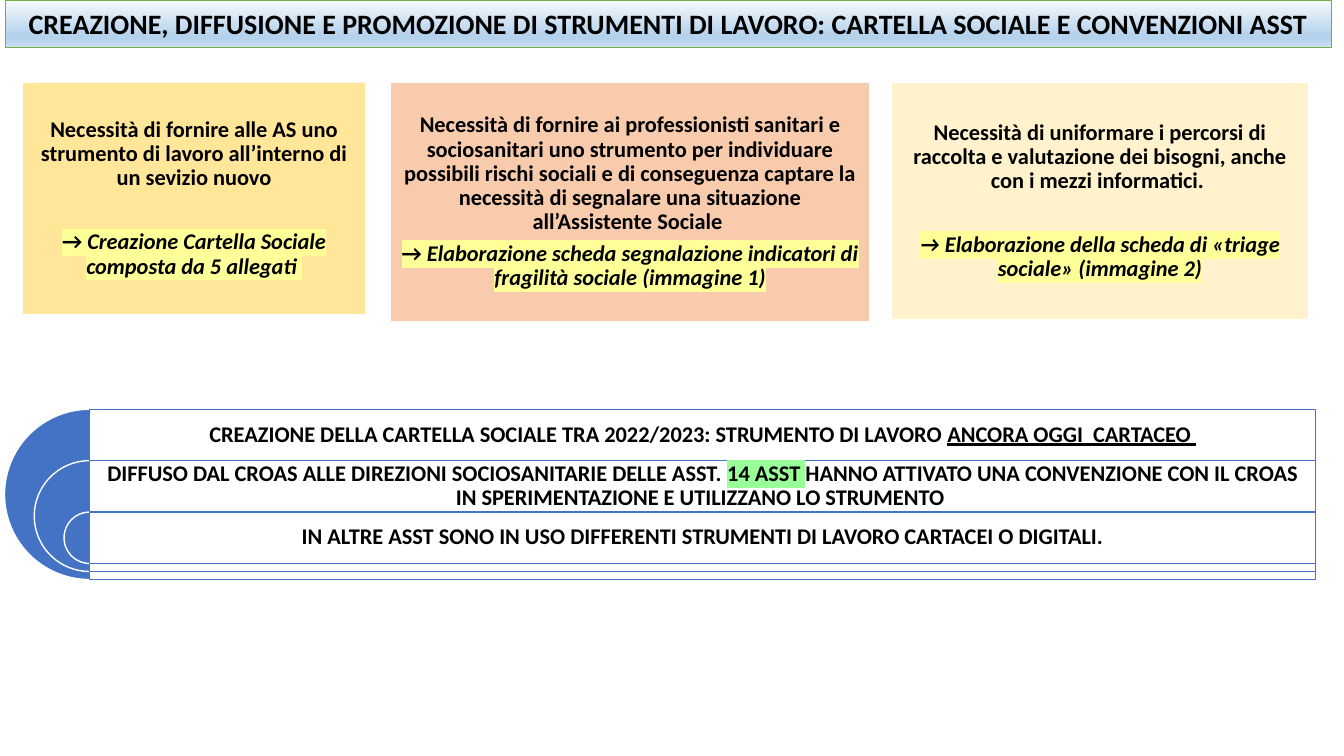
from dataclasses import dataclass

from lxml import etree
from pptx import Presentation
from pptx.dml.color import RGBColor
from pptx.enum.shapes import MSO_SHAPE
from pptx.enum.text import MSO_ANCHOR, PP_ALIGN
from pptx.oxml.ns import qn
from pptx.shapes.autoshape import Shape
from pptx.slide import Slide
from pptx.text.text import TextFrame
from pptx.util import Inches, Pt

RECTANGLE = MSO_SHAPE.RECTANGLE
PIE = MSO_SHAPE.PIE
MIDDLE = MSO_ANCHOR.MIDDLE
CENTER = PP_ALIGN.CENTER

FONT = "Calibri"
BLACK = RGBColor(0x00, 0x00, 0x00)
WHITE = RGBColor(0xFF, 0xFF, 0xFF)
BLUE = RGBColor(0x44, 0x72, 0xC4)
GREEN = RGBColor(0x70, 0xAD, 0x47)
GOLD = RGBColor(0xFF, 0xE6, 0x99)
PEACH = RGBColor(0xF8, 0xCB, 0xAD)
CREAM = RGBColor(0xFF, 0xF2, 0xCC)
YELLOW_MARK = RGBColor(0xFF, 0xFF, 0x99)
GREEN_MARK = RGBColor(0x99, 0xFF, 0x99)
TITLE_STOPS = (
    (0, RGBColor(0xF7, 0xFA, 0xFD)),
    (74, RGBColor(0xB5, 0xD2, 0xEC)),
    (83, RGBColor(0xB5, 0xD2, 0xEC)),
    (100, RGBColor(0xCE, 0xE1, 0xF2)),
)

TITLE = "CREAZIONE, DIFFUSIONE E PROMOZIONE DI STRUMENTI DI LAVORO: CARTELLA SOCIALE E CONVENZIONI ASST"
CARD_TOP = 0.82
BODY_SIZE = 16
BODY_INSET = 0.07
NARROW_GAP = 5.6
WIDE_GAP = 28.5
BAND_LEFT = 0.89
BAND_TOP = 4.06
BAND_WIDTH = 12.16
BAND_STEP = 0.51


@dataclass(frozen=True)
class Span:
    text: str
    italic: bool = False
    underline: bool = False
    mark: RGBColor | None = None


@dataclass(frozen=True)
class Card:
    left: float
    width: float
    height: float
    color: RGBColor
    gap: float
    need: str
    answer: tuple[Span, ...]


@dataclass(frozen=True)
class Band:
    height: float
    spans: tuple[Span, ...]


CARDS = (
    Card(0.22, 3.41, 2.3, GOLD, WIDE_GAP,
         "Necessità di fornire alle AS uno strumento di lavoro all’interno di un sevizio nuovo",
         (Span("→ ", mark=YELLOW_MARK),
          Span("Creazione Cartella Sociale composta da 5 allegati ", italic=True, mark=YELLOW_MARK))),
    Card(3.87, 4.76, 2.37, PEACH, NARROW_GAP,
         "Necessità di fornire ai professionisti sanitari e sociosanitari uno strumento per "
         "individuare possibili rischi sociali e di conseguenza captare la necessità di segnalare "
         "una situazione all’Assistente Sociale ",
         (Span("→ ", mark=YELLOW_MARK),
          Span("Elaborazione scheda segnalazione indicatori di fragilità sociale",
               italic=True, mark=YELLOW_MARK),
          Span(" ", mark=YELLOW_MARK),
          Span("(immagine 1)", italic=True, mark=YELLOW_MARK))),
    Card(8.84, 4.14, 2.35, CREAM, WIDE_GAP,
         "Necessità di uniformare i percorsi di raccolta e valutazione dei bisogni, anche con i "
         "mezzi informatici. ",
         (Span("→ Elaborazione della scheda di «triage sociale» (immagine 2)",
               italic=True, mark=YELLOW_MARK),)),
)

BANDS = (
    Band(1.69, (
        Span("CREAZIONE DELLA CARTELLA SOCIALE TRA 2022/2023: STRUMENTO DI LAVORO "),
        Span("ANCORA OGGI  CARTACEO ", underline=True))),
    Band(1.1, (
        Span("DIFFUSO DAL CROAS ALLE DIREZIONI SOCIOSANITARIE DELLE ASST. "),
        Span("14 ASST ", mark=GREEN_MARK),
        Span("HANNO ATTIVATO UNA CONVENZIONE CON IL CROAS IN SPERIMENTAZIONE E UTILIZZANO LO STRUMENTO "))),
    Band(0.51, (
        Span("IN ALTRE ASST SONO IN USO DIFFERENTI STRUMENTI DI LAVORO CARTACEI O DIGITALI."),)),
)


def add_box(slide: Slide, kind: MSO_SHAPE, left: float, top: float, width: float, height: float,
            fill: RGBColor, line: RGBColor, line_width: float = 1) -> Shape:
    shape = slide.shapes.add_shape(kind, Inches(left), Inches(top), Inches(width), Inches(height))
    shape.shadow.inherit = False
    shape.fill.solid()
    shape.fill.fore_color.rgb = fill
    shape.line.color.rgb = line
    shape.line.width = Pt(line_width)
    return shape


def write_text(frame: TextFrame, paragraphs: tuple[tuple[Span, ...], ...], size: float = BODY_SIZE,
               spacing: float = 0.9, gap: float = 0) -> None:
    """Write centred bold paragraphs; gap is the space between them in points."""
    frame.word_wrap = True
    frame.vertical_anchor = MIDDLE
    for index, spans in enumerate(paragraphs):
        paragraph = frame.add_paragraph() if index else frame.paragraphs[0]
        paragraph.alignment = CENTER
        paragraph.line_spacing = spacing
        if index:
            paragraph.space_before = Pt(gap)
        paragraph.font.name = FONT
        paragraph.font.size = Pt(size)
        paragraph.font.bold = True
        paragraph.font.color.rgb = BLACK
        for span in spans:
            run = paragraph.add_run()
            run.text = span.text
            if span.italic:
                run.font.italic = True
            if span.underline:
                run.font.underline = True
            if span.mark is not None:
                properties = run._r.get_or_add_rPr()
                highlight = etree.SubElement(properties, qn("a:highlight"))
                etree.SubElement(highlight, qn("a:srgbClr"), val=str(span.mark))


def set_body_insets(frame: TextFrame) -> None:
    frame.margin_left = frame.margin_right = Inches(BODY_INSET)
    frame.margin_top = frame.margin_bottom = Inches(BODY_INSET)


def add_title(slide: Slide) -> None:
    bar = add_box(slide, RECTANGLE, 0.05, 0, 13.16, 0.47, WHITE, GREEN, 0.5)
    bar.fill.gradient()
    bar.fill.gradient_angle = 270
    stop_list = bar._element.spPr.find(f"{qn('a:gradFill')}/{qn('a:gsLst')}")
    for stop in list(stop_list):
        stop_list.remove(stop)
    for position, color in TITLE_STOPS:
        stop = etree.SubElement(stop_list, qn("a:gs"), pos=str(position * 1000))
        etree.SubElement(stop, qn("a:srgbClr"), val=str(color))
    write_text(bar.text_frame, ((Span(TITLE),),), size=20, spacing=1)


def add_card(slide: Slide, card: Card) -> None:
    box = add_box(slide, RECTANGLE, card.left, CARD_TOP, card.width, card.height, card.color, WHITE)
    set_body_insets(box.text_frame)
    write_text(box.text_frame, ((Span(card.need),), card.answer), gap=card.gap)


def add_band(slide: Slide, band: Band, top: float) -> None:
    """Draw a half disc, the frame to its right and the text in the frame's first row."""
    half_disc = add_box(slide, PIE, BAND_LEFT - band.height / 2, top, band.height, band.height, BLUE, WHITE)
    half_disc.adjustments[0] = 54
    half_disc.adjustments[1] = 162
    frame_box = add_box(slide, RECTANGLE, BAND_LEFT, top, BAND_WIDTH, band.height, WHITE, BLUE)
    color = frame_box._element.spPr.find(f"{qn('a:solidFill')}/{qn('a:srgbClr')}")
    etree.SubElement(color, qn("a:alpha"), val="90000")
    label = slide.shapes.add_textbox(Inches(BAND_LEFT), Inches(top), Inches(BAND_WIDTH), Inches(BAND_STEP))
    set_body_insets(label.text_frame)
    write_text(label.text_frame, (band.spans,))


def main() -> None:
    presentation = Presentation()
    presentation.slide_width = Inches(13.33)
    presentation.slide_height = Inches(7.5)
    slide = presentation.slides.add_slide(presentation.slide_layouts[6])
    add_title(slide)
    for card in CARDS:
        add_card(slide, card)
    for index, band in enumerate(BANDS):
        add_band(slide, band, BAND_TOP + index * BAND_STEP)
    presentation.save("out.pptx")


if __name__ == "__main__":
    main()
